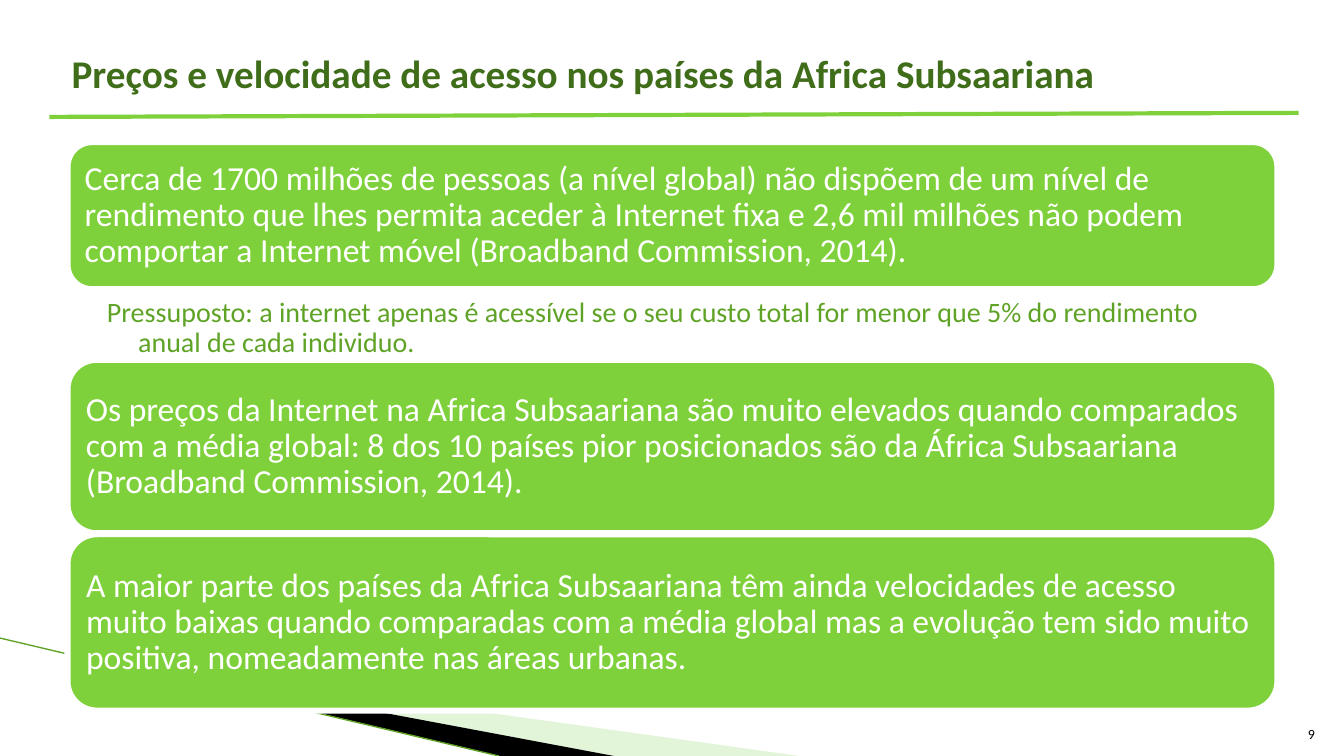
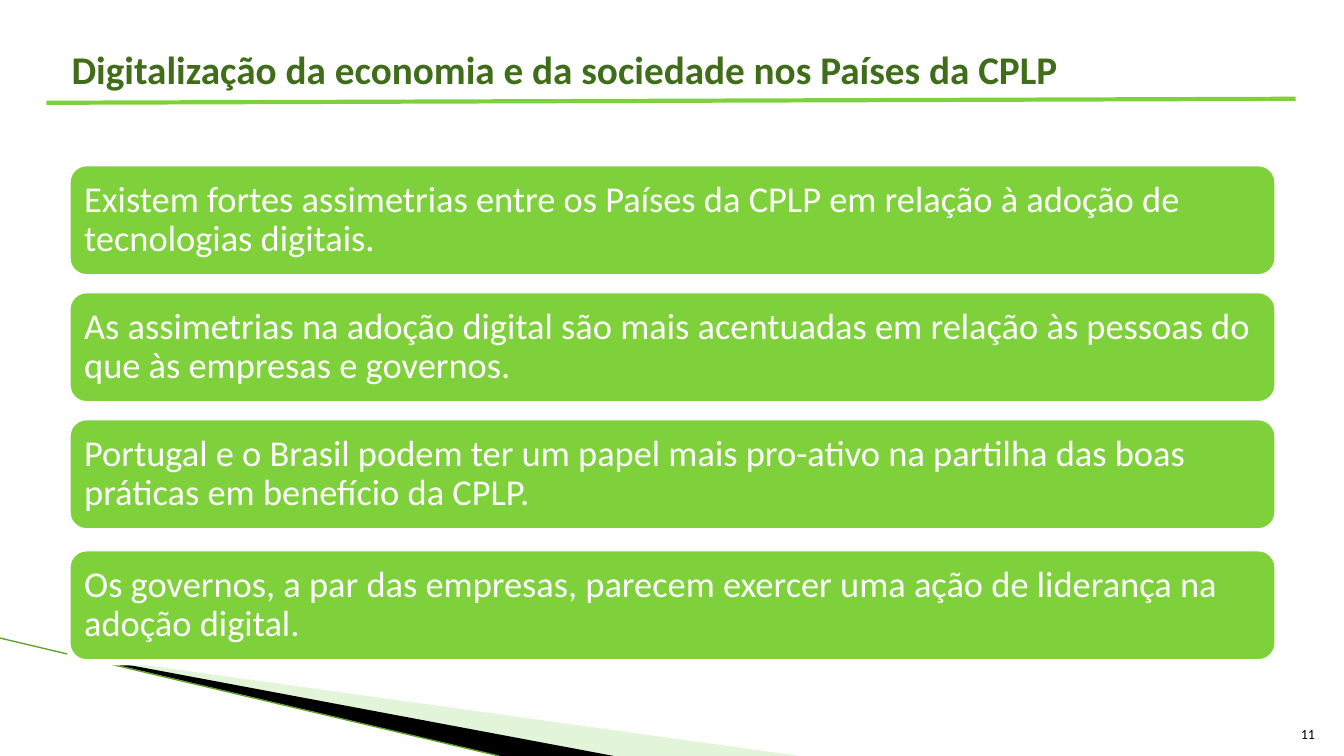
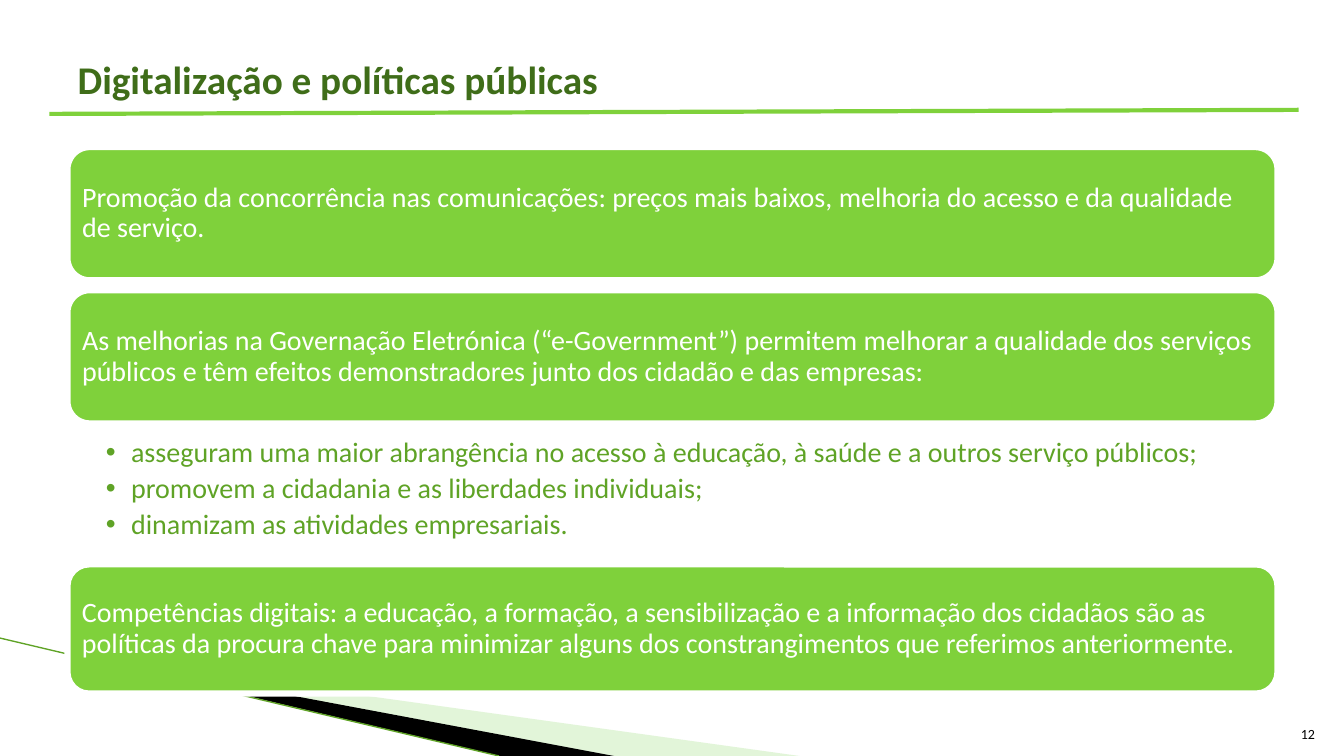
from lxml.etree import SubElement
from pptx import Presentation
from pptx.dml.color import RGBColor
from pptx.enum.shapes import MSO_CONNECTOR, MSO_SHAPE
from pptx.enum.text import MSO_ANCHOR, MSO_AUTO_SIZE, PP_ALIGN
from pptx.oxml.ns import qn
from pptx.util import Inches, Pt

FONT = "Calibri"
GREEN = RGBColor(0x7F, 0xD1, 0x3B)
TITLE_GREEN = RGBColor(0x3F, 0x6D, 0x19)
TEXT_GREEN = RGBColor(0x5F, 0xA3, 0x26)
PALE_GREEN = RGBColor(0xB8, 0xE7, 0xA1)
WHITE = RGBColor(0xFF, 0xFF, 0xFF)
BLACK = RGBColor(0x00, 0x00, 0x00)

CARD_LEFT, CARD_WIDTH = 0.67, 12
TITLE_AND_BODY, TITLE_ONLY = 1, 5

# Each card is (top, height, text); each rule is (left, top) of its lower end.
SLIDES = [
    {
        "number": "9",
        "title": "Preços e velocidade de acesso nos países da Africa Subsaariana",
        "title_box": (0.61, 0.28, 12, 0.88),
        "rule": (0.49, 1.16),
        "card_size": 24,
        "card_inset": 0.1,
        "cards": [
            (1.41, 1.46, "Cerca de 1700 milhões de pessoas (a nível global) não dispõem de um nível de "
             "rendimento que lhes permita aceder à Internet fixa e 2,6 mil milhões não podem "
             "comportar a Internet móvel (Broadband Commission, 2014)."),
            (3.57, 1.72, "Os preços da Internet na Africa Subsaariana são muito elevados quando comparados "
             "com a média global: 8 dos 10 países pior posicionados são da África Subsaariana "
             "(Broadband Commission, 2014)."),
            (5.3, 1.75, "A maior parte dos países da Africa Subsaariana têm ainda velocidades de acesso "
             "muito baixas quando comparadas com a média global mas a evolução tem sido muito "
             "positiva, nomeadamente nas áreas urbanas."),
        ],
        "body": {
            "box": (0.68, 2.91, 12, 0.96),
            "insets": (0.38, 0.05, 0.3, 0.05),
            "indent": 0.31,
            "bullet": None,
            "items": ["Pressuposto: a internet apenas é acessível se o seu custo total for menor que 5% "
                      "do rendimento anual de cada individuo."],
        },
    },
    {
        "number": "11",
        "title": "Digitalização da economia e da sociedade nos Países da CPLP",
        "title_box": (0.61, 0.31, 12, 0.74),
        "rule": (0.46, 1.02),
        "card_size": 26,
        "card_inset": 0.11,
        "cards": [
            (1.62, 1.13, "Existem fortes assimetrias entre os Países da CPLP em relação à adoção de "
             "tecnologias digitais."),
            (2.88, 1.13, "As assimetrias na adoção digital são mais acentuadas em relação às pessoas do "
             "que às empresas e governos."),
            (4.14, 1.13, "Portugal e o Brasil podem ter um papel mais pro-ativo na partilha das boas "
             "práticas em benefício da CPLP."),
            (5.44, 1.13, "Os governos, a par das empresas, parecem exercer uma ação de liderança na "
             "adoção digital."),
        ],
        "body": None,
    },
    {
        "number": "12",
        "title": "Digitalização e políticas públicas",
        "title_box": (0.67, 0.3, 12, 0.96),
        "rule": (0.49, 1.13),
        "card_size": 20,
        "card_inset": 0.08,
        "cards": [
            (1.46, 1.32, "Promoção da concorrência nas comunicações: preços mais baixos, melhoria do "
             "acesso e da qualidade de serviço."),
            (2.88, 1.32, "As melhorias na Governação Eletrónica (“e-Government”) permitem melhorar a "
             "qualidade dos serviços públicos e têm efeitos demonstradores junto dos cidadão e das "
             "empresas:"),
            (5.6, 1.28, "Competências digitais: a educação, a formação, a sensibilização e a informação "
             "dos cidadãos são as políticas da procura chave para minimizar alguns dos "
             "constrangimentos que referimos anteriormente."),
        ],
        "body": {
            "box": (0.67, 4.32, 12, 1.11),
            "insets": (0.38, 0.03, 0.16, 0.03),
            "indent": 0.25,
            "bullet": "•",
            "items": [
                "asseguram uma maior abrangência no acesso à educação, à saúde e a outros serviço públicos;",
                "promovem a cidadania e as liberdades individuais;",
                "dinamizam as atividades empresariais.",
            ],
        },
    },
]


def write(paragraph, text, size, color, bold=False):
    run = paragraph.add_run()
    run.text = text
    run.font.name = FONT
    run.font.size = Pt(size)
    run.font.bold = bold
    run.font.color.rgb = color


def add_line(slide, start, end, color, width):
    line = slide.shapes.add_connector(
        MSO_CONNECTOR.STRAIGHT, *[Inches(value) for value in (*start, *end)])
    line.line.color.rgb = color
    line.line.width = Pt(width)
    SubElement(line.element.spPr, qn("a:effectLst"))
    return line


presentation = Presentation()
presentation.slide_width = Inches(13.33)
presentation.slide_height = Inches(7.5)
slides = []
for content in SLIDES:
    layout = presentation.slide_layouts[TITLE_AND_BODY if content["body"] else TITLE_ONLY]
    slides.append(presentation.slides.add_slide(layout))

# Corner decoration: drawn once, then moved to the back of the slide master
wedges = [
    (PALE_GREEN, 40, [(0.73, 6.5), (7.93, 7.5), (6.08, 7.5)]),
    (BLACK, 100, [(0.71, 6.49), (6.09, 7.5), (4.96, 7.5)]),
]
decoration = []
for color, opacity, corners in wedges:
    points = [(Inches(x), Inches(y)) for x, y in corners]
    builder = slides[0].shapes.build_freeform(*points[0])
    builder.add_line_segments(points[1:], close=True)
    wedge = builder.convert_to_shape()
    wedge.shadow.inherit = False
    wedge.fill.solid()
    wedge.fill.fore_color.rgb = color
    wedge.line.fill.background()
    if opacity < 100:
        fill_color = wedge.element.spPr.find(qn("a:solidFill")).find(qn("a:srgbClr"))
        SubElement(fill_color, qn("a:alpha")).set("val", str(opacity * 1000))
    decoration.append(wedge)
decoration.append(add_line(slides[0], (0, 6.33), (4.95, 7.5), TEXT_GREEN, 0.95))
master_tree = presentation.slide_master.shapes.element
for index, shape in enumerate(decoration):
    shape.element.xpath("./*/p:cNvPr")[0].set("id", str(100 + index))
    master_tree.insert(2 + index, shape.element)

for slide, content in zip(slides, SLIDES):
    title = slide.shapes.title
    title.left, title.top, title.width, title.height = map(Inches, content["title_box"])
    title.text_frame.auto_size = MSO_AUTO_SIZE.NONE
    title.text_frame.vertical_anchor = MSO_ANCHOR.MIDDLE
    title_paragraph = title.text_frame.paragraphs[0]
    title_paragraph.alignment = PP_ALIGN.LEFT
    write(title_paragraph, content["title"], 28, TITLE_GREEN, bold=True)

    rule_left, rule_top = content["rule"]
    add_line(slide, (rule_left, rule_top), (rule_left + 12.39, rule_top - 0.04), GREEN, 3)

    for top, height, text in content["cards"]:
        card = slide.shapes.add_shape(
            MSO_SHAPE.ROUNDED_RECTANGLE,
            Inches(CARD_LEFT), Inches(top), Inches(CARD_WIDTH), Inches(height))
        card.shadow.inherit = False
        card.fill.solid()
        card.fill.fore_color.rgb = GREEN
        card.line.color.rgb = WHITE
        card.line.width = Pt(4.33)
        frame = card.text_frame
        frame.word_wrap = True
        frame.vertical_anchor = MSO_ANCHOR.MIDDLE
        inset = Inches(content["card_inset"])
        frame.margin_left = frame.margin_top = frame.margin_right = frame.margin_bottom = inset
        paragraph = frame.paragraphs[0]
        paragraph.alignment = PP_ALIGN.LEFT
        paragraph.line_spacing = 0.9
        write(paragraph, text, content["card_size"], WHITE)

    body = content["body"]
    if body:
        placeholder = slide.placeholders[1]
        placeholder.left, placeholder.top, placeholder.width, placeholder.height = map(
            Inches, body["box"])
        frame = placeholder.text_frame
        frame.auto_size = MSO_AUTO_SIZE.NONE
        frame.margin_left, frame.margin_top, frame.margin_right, frame.margin_bottom = map(
            Inches, body["insets"])
        for index, item in enumerate(body["items"]):
            paragraph = frame.add_paragraph() if index else frame.paragraphs[0]
            properties = paragraph._p.get_or_add_pPr()
            properties.set("marL", str(Inches(body["indent"])))
            properties.set("indent", str(-Inches(body["indent"])))
            if body["bullet"]:
                SubElement(properties, qn("a:buChar")).set("char", body["bullet"])
            else:
                SubElement(properties, qn("a:buNone"))
            paragraph.line_spacing = 0.9
            paragraph.space_before = Pt(0)
            paragraph.space_after = Pt(4)
            write(paragraph, item, 20, TEXT_GREEN)

    number_box = slide.shapes.add_textbox(Inches(12.61), Inches(7.01), Inches(0.53), Inches(0.4))
    number_box.text_frame.word_wrap = True
    number_box.text_frame.vertical_anchor = MSO_ANCHOR.BOTTOM
    number_paragraph = number_box.text_frame.paragraphs[0]
    number_paragraph.alignment = PP_ALIGN.RIGHT
    write(number_paragraph, content["number"], 10, BLACK)

presentation.save("out.pptx")
